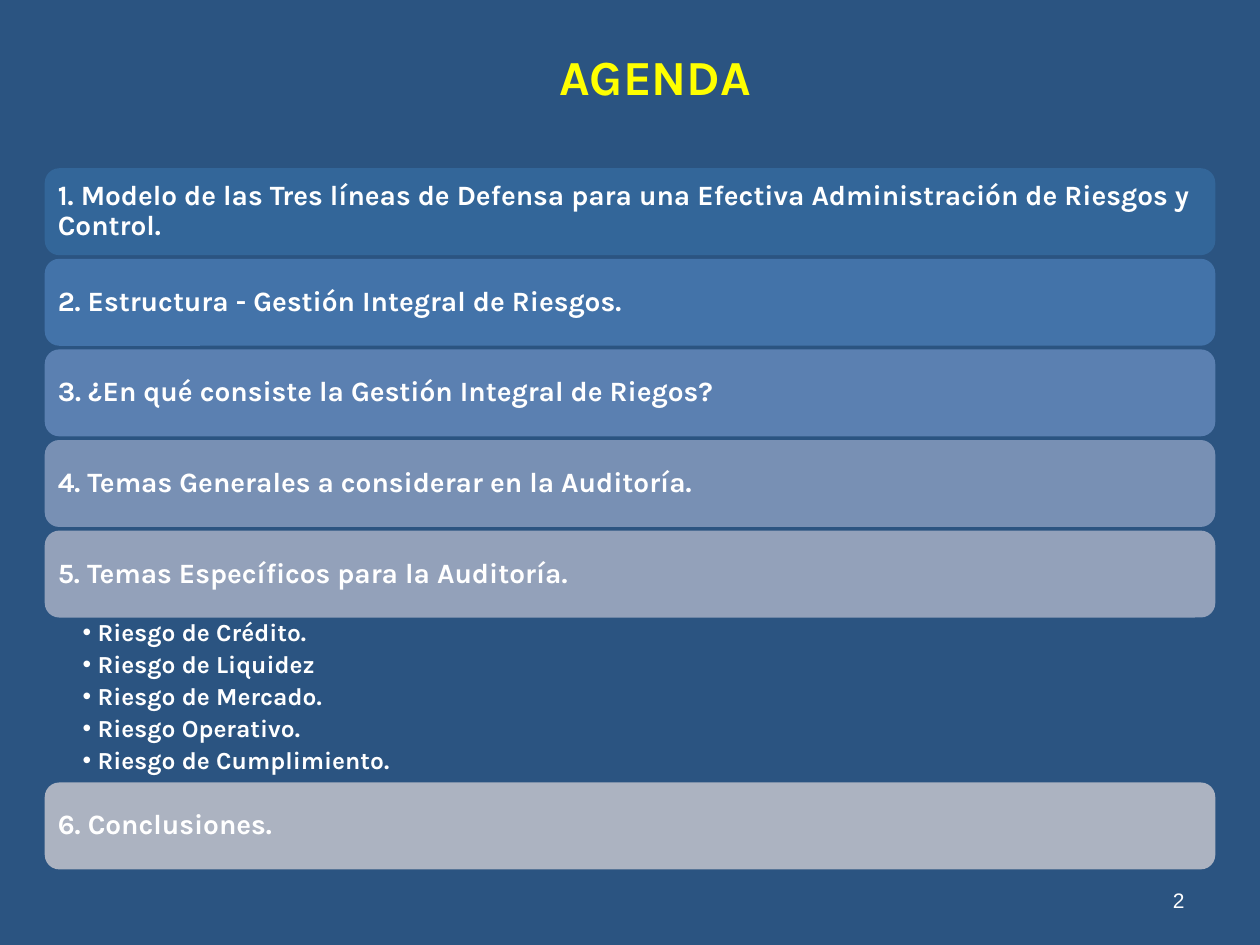
from typing import NamedTuple

from lxml import etree
from pptx import Presentation
from pptx.dml.color import RGBColor
from pptx.enum.shapes import MSO_SHAPE
from pptx.enum.text import MSO_ANCHOR, PP_ALIGN
from pptx.oxml.ns import qn
from pptx.util import Inches, Pt

ROUND = MSO_SHAPE.ROUNDED_RECTANGLE
TOP, MID, LOW = MSO_ANCHOR.TOP, MSO_ANCHOR.MIDDLE, MSO_ANCHOR.BOTTOM
LEFT, MIDST, RIGHT = PP_ALIGN.LEFT, PP_ALIGN.CENTER, PP_ALIGN.RIGHT

NAVY = RGBColor(0x2B, 0x54, 0x81)
WHITE = RGBColor(0xFF, 0xFF, 0xFF)
YELLOW = RGBColor(0xFF, 0xFF, 0x00)
TINTS = [
    RGBColor(0x33, 0x66, 0x99),
    RGBColor(0x43, 0x73, 0xA9),
    RGBColor(0x5B, 0x80, 0xB1),
    RGBColor(0x78, 0x90, 0xB4),
    RGBColor(0x93, 0xA1, 0xBA),
    RGBColor(0xAC, 0xB3, 0xC1),
]

# The grid has 100 columns and 75 rows of equal size
WIDE, HIGH = Inches(10), Inches(7.5)
COL, ROW = WIDE / 100, HIGH / 75
EDGE, SPAN = 3.55, 92.9
FIRST, TALL, STEP = 13.35, 6.9, 7.19
LIST = 12.8  # height of the list below the fifth bar

TOPICS = [
    "1. Modelo de las Tres líneas de Defensa para una Efectiva "
    "Administración de Riesgos y Control.",
    "2. Estructura - Gestión Integral de Riesgos.",
    "3. ¿En qué consiste la Gestión Integral de Riegos?",
    "4. Temas Generales a considerar en la Auditoría.",
    "5. Temas Específicos para la Auditoría.",
    "6. Conclusiones.",
]
RISKS = [
    "Riesgo de Crédito.",
    "Riesgo de Liquidez",
    "Riesgo de Mercado.",
    "Riesgo Operativo.",
    "Riesgo de Cumplimiento.",
]


class Area(NamedTuple):
    left: float
    top: float
    width: float
    height: float

    def place(self) -> list[int]:
        return [round(n * unit) for n, unit in zip(self, (COL, ROW, COL, ROW))]


class Bar(NamedTuple):
    text: str
    tint: RGBColor
    top: float


def add_dot(para) -> None:
    props = para._p.get_or_add_pPr()
    props.set("marL", str(Inches(0.12)))
    props.set("indent", str(-Inches(0.12)))
    etree.SubElement(props, qn("a:buFont")).set("typeface", "Arial")
    etree.SubElement(props, qn("a:buChar")).set("char", "•")


def write(shape, lines: list[str], size: float = 16, color: RGBColor = WHITE,
          face: str = "Karla", bold: bool = True, align=LEFT, anchor=MID,
          inset: tuple = (0.1, 0.05, 0.1, 0.05), space: float = 1,
          after: float = 0, dots: bool = False) -> None:
    frame = shape.text_frame
    frame.word_wrap = True
    frame.vertical_anchor = anchor
    (frame.margin_left, frame.margin_top,
     frame.margin_right, frame.margin_bottom) = map(Inches, inset)
    for i, line in enumerate(lines):
        para = frame.paragraphs[0] if i == 0 else frame.add_paragraph()
        if dots:
            add_dot(para)
        para.alignment = align
        para.line_spacing = space
        para.space_after = Pt(after)
        run = para.add_run()
        run.text = line
        font = run.font
        font.name, font.size, font.bold = face, Pt(size), bold
        font.color.rgb = color


def add_box(slide, area: Area, lines: list[str], **form) -> None:
    write(slide.shapes.add_textbox(*area.place()), lines, **form)


def add_bar(slide, bar: Bar) -> None:
    area = Area(EDGE, bar.top, SPAN, TALL)
    shape = slide.shapes.add_shape(ROUND, *area.place())
    shape.shadow.inherit = False
    shape.fill.solid()
    shape.fill.fore_color.rgb = bar.tint
    shape.line.fill.background()
    write(shape, [bar.text], inset=(0.07,) * 4, space=0.9)


def main() -> None:
    deck = Presentation()
    deck.slide_width, deck.slide_height = WIDE, HIGH
    slide = deck.slides.add_slide(deck.slide_layouts[6])
    slide.background.fill.solid()
    slide.background.fill.fore_color.rgb = NAVY

    # Title
    add_box(slide, Area(20.9, 2.3, 62.2, 7.4), ["AGENDA"],
            size=28, color=YELLOW, align=MIDST)

    # Topic bars: the last one sits below the list of risks
    last = len(TOPICS) - 1
    for i, (text, tint) in enumerate(zip(TOPICS, TINTS)):
        top = FIRST + i * STEP + (LIST if i == last else 0)
        add_bar(slide, Bar(text, tint, top))

    # Risks under the fifth topic
    under = FIRST + (last - 1) * STEP + TALL
    add_box(slide, Area(EDGE, under, SPAN, LIST), RISKS, size=14, anchor=TOP,
            inset=(0.3, 0.02, 0.11, 0.02), space=0.9, after=3.2, dots=True)

    # Page number
    add_box(slide, Area(71.7, 67.7, 23.3, 5.2), ["2"], size=12, face="Arial",
            bold=False, align=RIGHT, anchor=LOW)

    deck.save("out.pptx")


if __name__ == "__main__":
    main()
